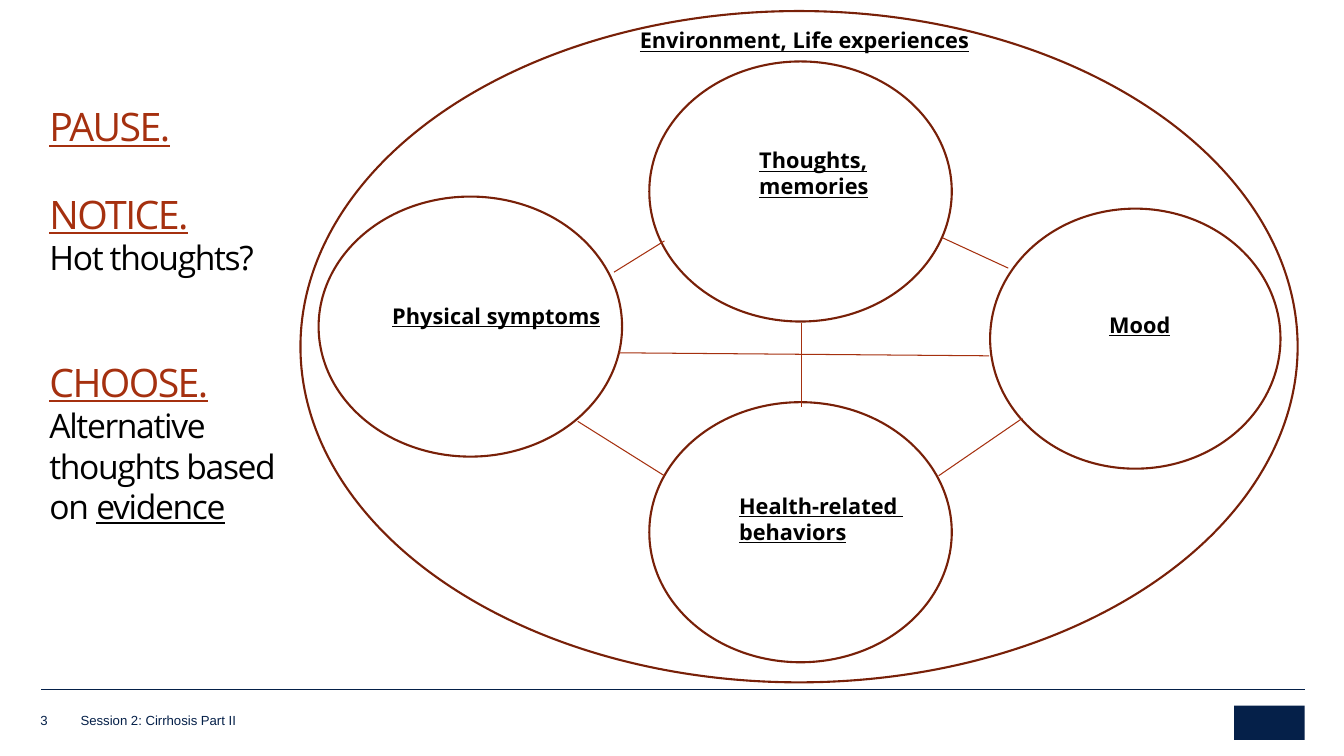
"""Build the slide on the cycle of thoughts, mood, behaviors and symptoms."""
from pptx import Presentation
from pptx.dml.color import RGBColor
from pptx.enum.shapes import MSO_CONNECTOR, MSO_SHAPE
from pptx.enum.text import MSO_ANCHOR, PP_ALIGN
from pptx.oxml.ns import qn
from pptx.util import Inches, Pt

NAVY, RUST, BROWN, BLACK = "052049", "A5300F", "782008", "000000"

FOOTER = {"size": 9.4, "name": "Arial", "color": NAVY}
LABEL = {"size": 15.5, "name": "Open Sans", "color": BLACK,
         "bold": True, "underline": True, "spacing": 5}
STEP = {"size": 28, "name": "Open Sans", "color": RUST,
        "underline": True, "spacing": -110}
DETAIL = {"size": 24, "name": "Open Sans", "color": BLACK,
          "underline": False, "spacing": -95}
EVIDENCE = {**DETAIL, "underline": True}


def rgb(value):
    return RGBColor.from_string(value)


def add_text(box, paragraphs, anchor=MSO_ANCHOR.TOP, alignment=PP_ALIGN.LEFT):
    frame = slide.shapes.add_textbox(*map(Inches, box)).text_frame
    frame.word_wrap = True
    frame.vertical_anchor = anchor
    for side in ("left", "top", "right", "bottom"):
        setattr(frame, f"margin_{side}", 0)
    for index, (line_height, space_before, runs) in enumerate(paragraphs):
        paragraph = frame.add_paragraph() if index else frame.paragraphs[0]
        paragraph.alignment = alignment
        if line_height:
            paragraph.line_spacing = Pt(line_height)
        if space_before:
            paragraph.space_before = Pt(space_before)
        for text, style in runs:
            for row, part in enumerate(text.split("\n")):
                if row:
                    paragraph.add_line_break()
                run = paragraph.add_run()
                run.text = part
                run.font.size = Pt(style["size"])
                run.font.color.rgb = rgb(style["color"])
                for name in ("name", "bold", "underline"):
                    setattr(run.font, name, style.get(name))
                run.font._element.set("spc", str(style.get("spacing", 0)))


presentation = Presentation()
presentation.slide_width = Inches(13.33)
presentation.slide_height = Inches(7.5)
slide = presentation.slides.add_slide(presentation.slide_layouts[6])

ovals = [
    (2.98, 0.11, 9.89, 6.66),
    (6.44, 0.61, 3, 2.58),
    (9.82, 2.07, 2.88, 2.58),
    (6.44, 3.99, 3, 2.58),
    (3.16, 1.95, 3.01, 2.58),
]
for box in ovals:
    oval = slide.shapes.add_shape(MSO_SHAPE.OVAL, *map(Inches, box))
    oval.shadow.inherit = False
    oval.fill.background()
    oval.line.color.rgb = rgb(BROWN)
    oval.line.width = Pt(1.5)

lines = [
    (0.41, 6.84, 12.94, 6.84, NAVY, 0.25),
    (6.09, 2.7, 6.59, 2.39, RUST, 0.75),
    (5.73, 4.18, 6.59, 4.72, RUST, 0.75),
    (7.95, 3.2, 7.95, 4.04, RUST, 0.75),
    (6.14, 3.5, 9.81, 3.53, RUST, 0.75),
    (9.35, 2.36, 10, 2.66, RUST, 0.75),
    (9.31, 4.72, 10.14, 4.15, RUST, 0.75),
]
for *ends, color, width in lines:
    connector = slide.shapes.add_connector(MSO_CONNECTOR.STRAIGHT, *map(Inches, ends))
    connector.line.color.rgb = rgb(color)
    connector.line.width = Pt(width)
    properties = connector._element.spPr
    properties.append(properties.makeelement(qn("a:effectLst"), {}))

labels = [
    ("Thoughts,\nmemories", (7.53, 1.46, 1.23, 0.52), PP_ALIGN.LEFT),
    ("Mood", (11, 3.09, 0.86, 0.26), PP_ALIGN.LEFT),
    ("Health-related \nbehaviors", (7.33, 4.89, 2.12, 0.52), PP_ALIGN.LEFT),
    ("Physical symptoms", (3.89, 3, 2.16, 0.26), PP_ALIGN.LEFT),
    ("Environment, Life experiences", (5.67, 0.27, 4.62, 0.26), PP_ALIGN.CENTER),
]
for text, box, alignment in labels:
    add_text(box, [(18.6, 0, [(text, LABEL)])], alignment=alignment)

add_text((0.49, 1.02, 2.41, 4.26), [
    (33.6, 0, [("PAUSE.", STEP)]),
    (33.6, 28.8, [("NOTICE.", STEP)]),
    (28.8, 0, [("Hot thoughts?", DETAIL)]),
    (33.6, 57.6, [("CHOOSE.", STEP)]),
    (28.8, 0, [("Alternative thoughts based on ", DETAIL), ("evidence", EVIDENCE)]),
])

footers = [
    ("3", (0.4, 7.05, 0.36, 0.17)),
    ("Session 2: Cirrhosis Part II", (0.8, 7.05, 6.29, 0.17)),
]
for text, box in footers:
    add_text(box, [(None, 0, [(text, FOOTER)])], anchor=MSO_ANCHOR.BOTTOM)

badge = slide.shapes.add_shape(
    MSO_SHAPE.RECTANGLE, Inches(12.24), Inches(7), Inches(0.7), Inches(0.34))
badge.shadow.inherit = False
badge.fill.solid()
badge.fill.fore_color.rgb = rgb(NAVY)
badge.line.fill.background()

presentation.save("out.pptx")
